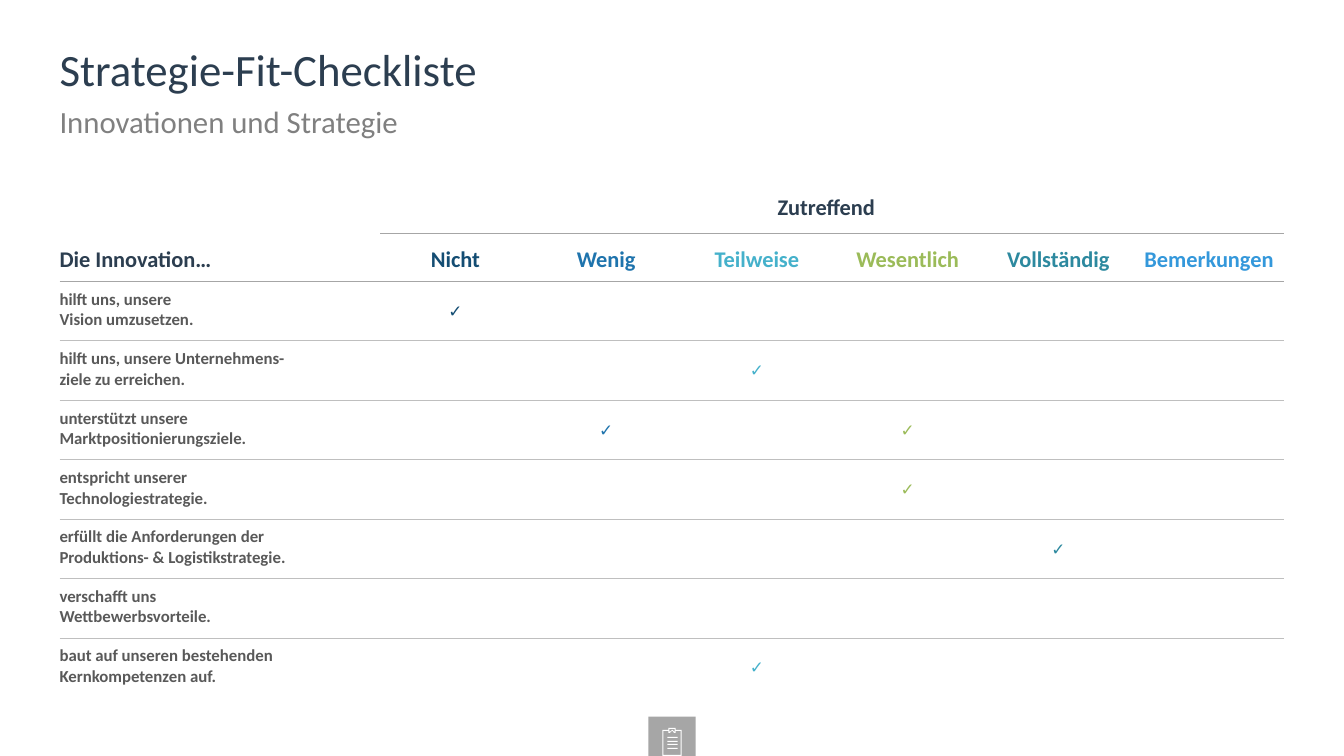
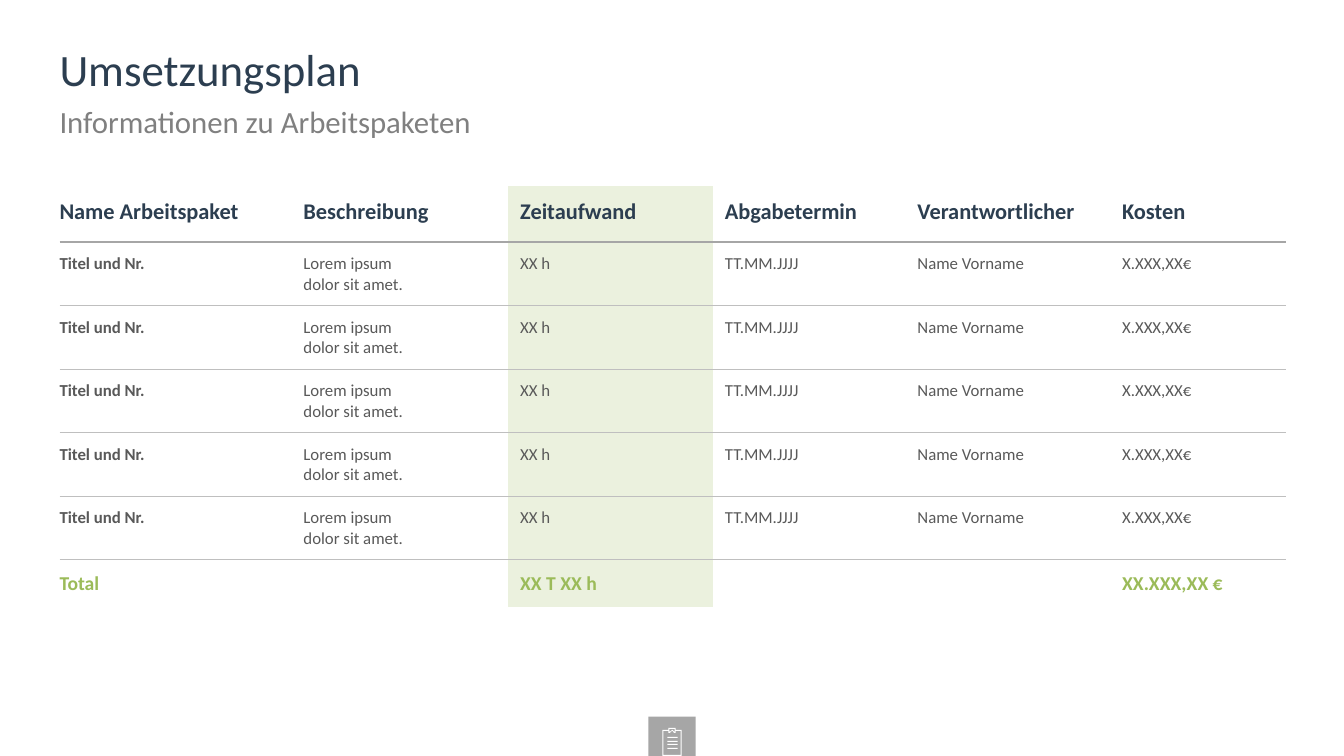
from dataclasses import dataclass

from lxml import etree
from pptx import Presentation
from pptx import util as u
from pptx.dml import color as dml
from pptx.enum import shapes, text
from pptx.oxml import ns


@dataclass(frozen=True)
class Theme:
    font: str = "Calibri"
    title: str = "2C3E50"
    subtitle: str = "808080"
    body: str = "595959"
    accent: str = "9BBB59"
    highlight: str = "EBF1DE"
    badge: str = "A6A6A6"
    icon: str = "FFFFFF"
    strong_line: tuple = ("A6A6A6", 1)
    thin_line: tuple = ("BFBFBF", 0.5)
    title_size: int = 32
    subtitle_size: int = 22
    head_size: int = 16
    total_size: int = 14
    body_size: int = 12


THEME = Theme()
WIDTH, HEIGHT = 13.33, 7.5
MARGIN, CONTENT = 0.59, 12.15
TITLE_TOP, TITLE_ROW, TABLE_TOP = 0.47, 0.59, 1.85
BADGE_WIDTH, BADGE_HEIGHT = 0.47, 0.39
NO_STYLE = "{2D5ABB26-0587-4C30-8999-92F81FD0307C}"

# Checklist content: header and colour of each rating, then statements with ticked columns
RATINGS = [("Nicht", "144D73"), ("Wenig", "1F74AD"), ("Teilweise", "45B1CB"),
           ("Wesentlich", "9BBB59"), ("Vollständig", "2D899F"), ("Bemerkungen", "3498DB")]
STATEMENTS = [
    ("hilft uns, unsere \vVision umzusetzen.", [1]),
    ("hilft uns, unsere Unternehmens-\vziele zu erreichen.", [3]),
    ("unterstützt unsere Marktpositionierungsziele.", [2, 4]),
    ("entspricht unserer \vTechnologiestrategie.", [4]),
    ("erfüllt die Anforderungen der \vProduktions- & Logistikstrategie.", [5]),
    ("verschafft uns\vWettbewerbsvorteile.", []),
    ("baut auf unseren bestehenden Kernkompetenzen auf.", [3]),
]

# Work plan content
PLAN_HEADS = ["Name Arbeitspaket", "Beschreibung", "Zeitaufwand",
              "Abgabetermin", "Verantwortlicher", "Kosten"]
PLAN_ENTRY = ["Titel und Nr.", "Lorem ipsum \vdolor sit amet.", "XX h",
              "TT.MM.JJJJ", "Name Vorname", "X.XXX,XX€"]
PLAN_TOTAL = ["Total", "", "XX T XX h", "", "", "XX.XXX,XX €"]
PLAN_PACKAGES = 5
EFFORT_COLUMN = 2
INDENTED_COLUMNS = (2, 3)


def rgb(value):
    return dml.RGBColor.from_string(value)


def format_runs(para, size, color, bold=False):
    for span in para.runs:
        span.font.name = THEME.font
        span.font.size = u.Pt(size)
        span.font.bold = bold
        span.font.color.rgb = rgb(color)


# Text and footer shared by all slides
def add_heading(page, row, words, size, color, space_after=0):
    box = page.shapes.add_textbox(u.Inches(MARGIN), u.Inches(TITLE_TOP + row * TITLE_ROW),
                                  u.Inches(CONTENT), u.Inches(TITLE_ROW))
    frame = box.text_frame
    frame.word_wrap = True
    frame.margin_left = frame.margin_right = frame.margin_top = frame.margin_bottom = 0
    frame.text = words
    para = frame.paragraphs[0]
    para.line_spacing = 0.9
    para.space_after = u.Pt(space_after)
    format_runs(para, size, color)


def paint(shape, color):
    shape.shadow.inherit = False
    shape.fill.solid()
    shape.fill.fore_color.rgb = rgb(color)
    shape.line.fill.background()


def add_clipboard_badge(page):
    group = page.shapes.add_group_shape()
    badge = group.shapes.add_shape(
        shapes.MSO_SHAPE.RECTANGLE, u.Inches((WIDTH - BADGE_WIDTH) / 2),
        u.Inches(HEIGHT - BADGE_HEIGHT), u.Inches(BADGE_WIDTH), u.Inches(BADGE_HEIGHT))
    paint(badge, THEME.badge)

    # Clipboard outline, its openings and the text lines, in hundredths of an inch
    outline = [(0, 2), (6, 2), (6, 0), (13, 0), (13, 2), (19, 2), (19, 28), (0, 28)]
    paper = [(1, 3), (6, 3), (6, 5), (8, 5), (8, 4), (10, 3), (11, 4), (11, 5),
             (13, 5), (13, 3), (18, 3), (18, 27), (1, 27)]
    clip = [(7, 1), (12, 1), (12, 4), (10, 2), (7, 4)]
    rules = [[(5, y), (15, y), (15, y + 1), (5, y + 1)] for y in (9, 13, 16, 20)]
    builder = group.shapes.build_freeform(*outline[0], scale=u.Inches(0.01))
    builder.add_line_segments(outline[1:], close=True)
    for contour in [paper, clip, *rules]:
        builder.move_to(*contour[0])
        builder.add_line_segments(contour[1:], close=True)
    paint(builder.convert_to_shape(u.Inches(6.57), u.Inches(7.22)), THEME.icon)


def add_page(deck, title, subtitle):
    page = deck.slides.add_slide(deck.slide_layouts[6])
    add_heading(page, 0, title, THEME.title_size, THEME.title)
    add_heading(page, 1, subtitle, THEME.subtitle_size, THEME.subtitle, space_after=10)
    add_clipboard_badge(page)
    return page


# Tables
def set_border(cell, side, line):
    color, points = line
    border = etree.SubElement(cell._tc.get_or_add_tcPr(), ns.qn("a:" + side),
                              w=str(u.Pt(points)))
    solid = etree.SubElement(border, ns.qn("a:solidFill"))
    etree.SubElement(solid, ns.qn("a:srgbClr"), val=color)


def write_cell(cell, words, size, color, insets, bold=False, centred=False, bottom=False):
    cell.margin_left, cell.margin_top, cell.margin_right, cell.margin_bottom = (
        u.Inches(inset) for inset in insets)
    cell.vertical_anchor = text.MSO_ANCHOR.BOTTOM if bottom else text.MSO_ANCHOR.TOP
    cell.text_frame.text = words
    para = cell.text_frame.paragraphs[0]
    para.alignment = text.PP_ALIGN.CENTER if centred else text.PP_ALIGN.LEFT
    format_runs(para, size, color, bold)


def add_ruled_table(page, widths, heights, head_rows, merges=(), highlight=None):
    """Table with strong lines under its head rows and thin lines between the others."""
    frame = page.shapes.add_table(len(heights), len(widths), u.Inches(MARGIN),
                                  u.Inches(TABLE_TOP), u.Inches(sum(widths)),
                                  u.Inches(sum(heights)))
    table = frame.table
    table.first_row = table.horz_banding = False
    table._tbl.tblPr.find(ns.qn("a:tableStyleId")).text = NO_STYLE
    for column, width in zip(table.columns, widths):
        column.width = u.Inches(width)
    for row, height in zip(table.rows, heights):
        row.height = u.Inches(height)
    for first, last in merges:
        table.cell(*first).merge(table.cell(*last))

    lines = [THEME.strong_line if r < head_rows else THEME.thin_line
             for r in range(len(heights) - 1)]
    for r in range(len(heights)):
        for c in range(len(widths)):
            cell = table.cell(r, c)
            if r > 0 and not cell.is_spanned:
                set_border(cell, "lnT", lines[r - 1])
            if r < len(lines):
                set_border(cell, "lnB", lines[r])
            if c == highlight:
                cell.fill.solid()
                cell.fill.fore_color.rgb = rgb(THEME.highlight)
            else:
                cell.fill.background()
    return table


def add_checklist(page):
    label_width = 3.18
    rating_width = (CONTENT - label_width) / len(RATINGS)
    table = add_ruled_table(
        page, [label_width] + [rating_width] * len(RATINGS),
        [0.47] * 2 + [0.59] * len(STATEMENTS), head_rows=2,
        merges=[((0, 0), (1, 0)), ((0, 1), (0, len(RATINGS)))])

    # Head rows
    head_insets = (0, 0.08, 0.12, 0.08)
    write_cell(table.cell(0, 0), "Die Innovation…", THEME.head_size, THEME.title,
               head_insets, bold=True, bottom=True)
    write_cell(table.cell(0, 1), "Zutreffend", THEME.head_size, THEME.title,
               head_insets, bold=True, centred=True)
    for c, (rating, color) in enumerate(RATINGS, start=1):
        write_cell(table.cell(1, c), rating, THEME.head_size, color,
                   (0.08, 0, 0.08, 0.08), bold=True, centred=True, bottom=True)

    # Statements and ticks
    for r, (statement, ticks) in enumerate(STATEMENTS, start=2):
        write_cell(table.cell(r, 0), statement, THEME.body_size, THEME.body,
                   (0, 0.08, 0.12, 0), bold=True)
        for c in ticks:
            write_cell(table.cell(r, c), "✓", THEME.body_size, RATINGS[c - 1][1],
                       (0.08, 0.2, 0.08, 0), bold=True, centred=True)


def add_work_plan(page):
    table = add_ruled_table(
        page, [2.42] + [2.03] * 4 + [1.63], [0.55] + [0.63] * PLAN_PACKAGES + [0.47],
        head_rows=1, highlight=EFFORT_COLUMN)
    rows = [PLAN_HEADS] + [PLAN_ENTRY] * PLAN_PACKAGES + [PLAN_TOTAL]
    for r, row in enumerate(rows):
        for c, words in enumerate(row):
            left = 0.12 if c in INDENTED_COLUMNS else 0
            cell = table.cell(r, c)
            if r == 0:
                write_cell(cell, words, THEME.head_size, THEME.title,
                           (left, 0, 0.12, 0.16), bold=True, bottom=True)
            elif row is PLAN_TOTAL:
                write_cell(cell, words, THEME.total_size, THEME.accent,
                           (left, 0.12, 0.12, 0), bold=True)
            else:
                write_cell(cell, words, THEME.body_size, THEME.body,
                           (left, 0.12, 0.12, 0), bold=c == 0)


def main():
    deck = Presentation()
    deck.slide_width, deck.slide_height = u.Inches(WIDTH), u.Inches(HEIGHT)
    add_checklist(add_page(deck, "Strategie-Fit-Checkliste", "Innovationen und Strategie"))
    add_work_plan(add_page(deck, "Umsetzungsplan", "Informationen zu Arbeitspaketen"))
    deck.save("out.pptx")


if __name__ == "__main__":
    main()
